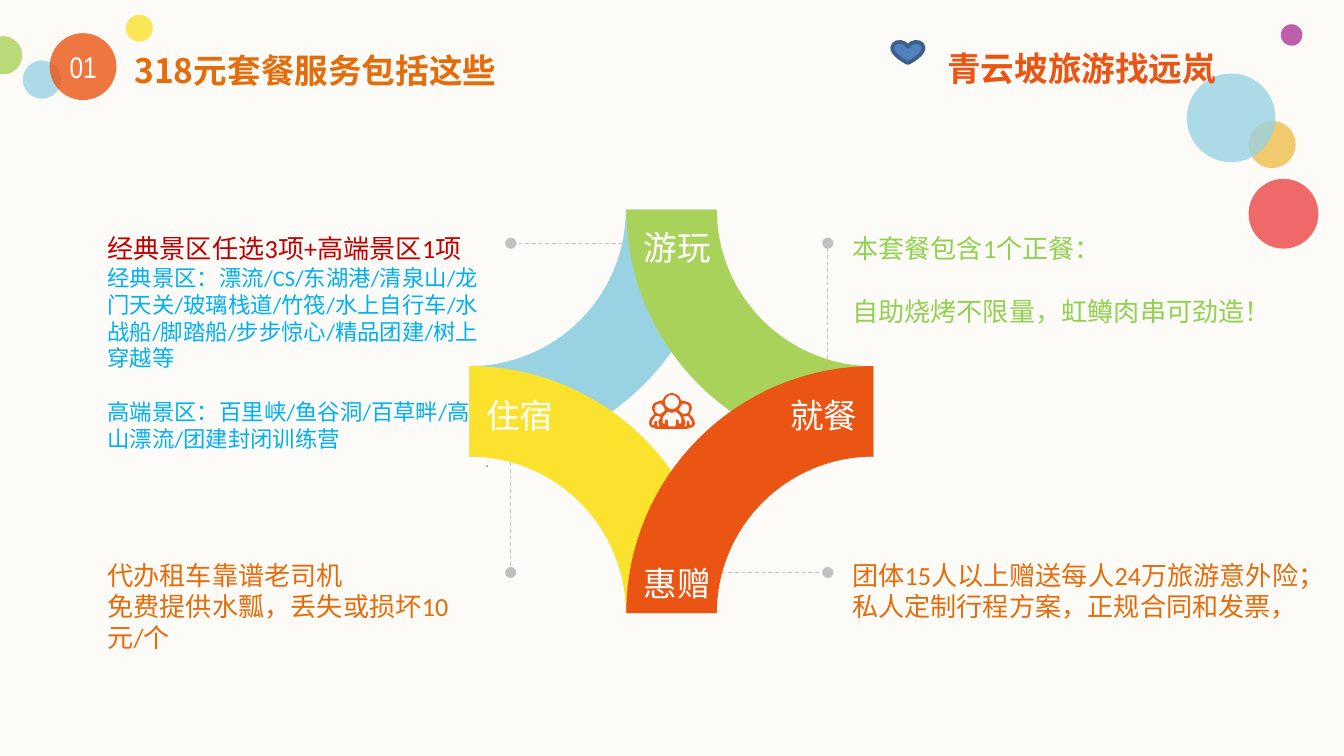
import math

import lxml.etree
import pptx
import pptx.dml.color
import pptx.enum.dml
import pptx.enum.shapes
import pptx.enum.text
import pptx.oxml.ns
import pptx.util

Pt = pptx.util.Pt
qn = pptx.oxml.ns.qn
SHAPES = pptx.enum.shapes.MSO_SHAPE
ALIGN = pptx.enum.text.PP_ALIGN
COLORS = {
    "background": "FCFBF7", "blue": "98D2E3", "yellow": "FBE22D",
    "green": "A9D25A", "orange": "EA5514", "purple": "B03896",
    "gold": "F0CA6C", "red": "EB4544", "line": "C0C0C0",
    "heart": "4F81BD", "heart_edge": "3A5F8C", "white": "FFFFFF",
    "lime": "92D050", "amber": "E46C0A", "crimson": "C00000",
    "sky": "00B0F0", "gray": "7F7F7F",
}
LEFT, TOP, RIGHT, BOTTOM = 251.4, 112.3, 467.9, 328.5
OUTER_RADIUS, INNER_RADIUS = 132.4, 83.9


def color(name):
    return pptx.dml.color.RGBColor.from_string(COLORS[name])


def paint(shape, fill, alpha=100):
    shape.shadow.inherit = False
    shape.fill.solid()
    shape.fill.fore_color.rgb = color(fill)
    shape.line.fill.background()
    if alpha < 100:
        tint = shape.fill._xPr.find(qn("a:solidFill"))[0]
        lxml.etree.SubElement(tint, qn("a:alpha"), val=str(alpha * 1000))


def add_preset(slide, kind, box, fill, alpha=100):
    shape = slide.shapes.add_shape(kind, *map(Pt, box))
    paint(shape, fill, alpha)
    return shape


def arc(center_x, center_y, radius, start, end, steps=32):
    angles = [math.radians(start + (end - start) * i / steps) for i in range(steps + 1)]
    return [(center_x + radius * math.cos(a), center_y + radius * math.sin(a)) for a in angles]


def add_outline(slide, contours, fill):
    contours = [[(Pt(x), Pt(y)) for x, y in contour] for contour in contours]
    builder = slide.shapes.build_freeform(*contours[0][0], scale=1.0)
    for index, contour in enumerate(contours):
        if index:
            builder.move_to(*contour[0])
        builder.add_line_segments(contour[1:], close=True)
    paint(builder.convert_to_shape(), fill)


def add_petal(slide, center_x, center_y, start, fill):
    outer = arc(center_x, center_y, OUTER_RADIUS, start, start + 90)
    inner = arc(center_x, center_y, INNER_RADIUS, start + 90, start)
    add_outline(slide, [outer + inner], fill)


def mirror(points):
    return [(-x, y) for x, y in reversed(points)]


def rounded(points):
    result = []
    for (x1, y1), (x2, y2) in zip(points, points[1:] + points[:1]):
        result += [(0.8 * x1 + 0.2 * x2, 0.8 * y1 + 0.2 * y2),
                   (0.2 * x1 + 0.8 * x2, 0.2 * y1 + 0.8 * y2)]
    return result


def add_people_icon(slide, center_x, top):
    silhouette = [(0, 0), (5, 2), (7, 6), (9, 6), (14, 8), (15, 12), (13, 16),
                  (16, 19), (17, 22), (17, 24), (15, 26), (13, 26), (12, 27), (0, 27)]
    body = [(0, 15), (3, 14), (6, 17), (7, 19), (7, 23), (5, 23), (5, 20),
            (3, 20), (3, 25), (0, 25)]
    side_head = [(7, 9), (9, 8), (12, 9), (13, 12), (12, 15), (9, 16), (7, 15), (5, 13)]
    side_body = [(11, 25), (11, 21), (13, 21), (13, 24), (15, 24), (15, 22),
                 (14, 20), (12, 17), (8, 18), (10, 21), (10, 23), (9, 25)]
    contours = [rounded(half + mirror(half)) for half in (silhouette, body)]
    contours.append(arc(0, 7, 5.2, 0, 360))
    for part in (side_head, side_body):
        contours += [rounded(part), rounded(mirror(part))]
    unit = 0.72
    add_outline(slide, [[(center_x + unit * x, top + unit * y) for x, y in contour]
                        for contour in contours], "orange")


def add_leader(slide, start, end):
    connector = slide.shapes.add_connector(
        pptx.enum.shapes.MSO_CONNECTOR.STRAIGHT, *map(Pt, start + end))
    connector.line.color.rgb = color("line")
    connector.line.width = Pt(0.5)
    connector.line.dash_style = pptx.enum.dml.MSO_LINE.DASH
    properties = connector._element.spPr
    lxml.etree.SubElement(properties.find(qn("a:ln")), qn("a:tailEnd"), type="oval")
    lxml.etree.SubElement(properties, qn("a:effectLst"))


def add_text(slide, box, paragraphs, font="Calibri", bold=False, align=ALIGN.LEFT, wrap=True):
    shape = slide.shapes.add_textbox(*map(Pt, box))
    frame = shape.text_frame
    frame.word_wrap = wrap
    frame.auto_size = pptx.enum.text.MSO_AUTO_SIZE.SHAPE_TO_FIT_TEXT
    if wrap:
        frame.margin_left = frame.margin_right = frame.margin_top = frame.margin_bottom = 0
    for index, (text, size, fill, gap) in enumerate(paragraphs):
        paragraph = frame.add_paragraph() if index else frame.paragraphs[0]
        paragraph.alignment = align
        paragraph.space_before = Pt(gap)
        run = paragraph.add_run()
        run.text = text
        run.font.size = Pt(size)
        run.font.name = font
        run.font.bold = bold
        run.font.color.rgb = color(fill)
    return frame


def add_petals(slide):
    add_petal(slide, LEFT, TOP, 0, "blue")
    add_petal(slide, LEFT, BOTTOM, 270, "yellow")
    add_petal(slide, RIGHT, TOP, 90, "green")
    add_petal(slide, RIGHT, BOTTOM, 180, "orange")
    add_people_icon(slide, 360, 210.4)
    for start, end in [((333.4, 130.3), (273.6, 130.3)), ((273.6, 247.7), (273.6, 306.7)),
                       ((386.6, 306.7), (443.5, 306.7)), ((443.5, 192.2), (443.5, 130.3))]:
        add_leader(slide, start, end)
    for text, left, top in [("游玩", 337.7, 118.1), ("就餐", 416.2, 208.1),
                            ("住宿", 253.4, 208.1), ("惠赠", 337.7, 298.1)]:
        add_text(slide, (left, top, 51.1, 28.8), [(text, 18, "white", 0)], wrap=False)


def add_descriptions(slide):
    add_text(slide, (456.5, 124.6, 241.9, 51.1), [
        ("本套餐包含1个正餐：", 14, "lime", 0),
        ("自助烧烤不限量，虹鳟肉串可劲造！", 14, "lime", 17)])
    add_text(slide, (456.5, 299.5, 250.6, 33.8), [
        ("团体15人以上赠送每人24万旅游意外险；", 14, "amber", 0),
        ("私人定制行程方案，正规合同和发票，", 14, "amber", 0)])
    add_text(slide, (57.6, 299.5, 216, 33.8), [
        ("代办租车靠谱老司机", 14, "amber", 0),
        ("免费提供水瓢，丢失或损坏10元/个", 14, "amber", 0)])
    frame = add_text(slide, (57.6, 124.6, 204.5, 128.2), [
        ("经典景区任选3项+高端景区1项", 14, "crimson", 0),
        ("经典景区：漂流/CS/东湖港/清泉山/龙门天关/玻璃栈道/竹筏/水上自行车/水战船/脚踏船/步步惊心/精品团建/树上穿越等",
         12, "sky", 0),
        ("高端景区：百里峡/鱼谷洞/百草畔/高山漂流/团建封闭训练营", 12, "sky", 14.5),
        (".", 8, "gray", 0)])
    frame.paragraphs[-1].alignment = ALIGN.RIGHT


def add_header(slide):
    for left, top, size, fill, alpha in [
            (67.5, 7.9, 14.4, "yellow", 80), (-8.6, 19.4, 20.5, "green", 80),
            (12.2, 32.4, 20.5, "blue", 80), (26.6, 17.8, 35.8, "orange", 80),
            (686.2, 13, 11.5, "purple", 80), (668.9, 64.8, 25.2, "gold", 100),
            (668.9, 95.8, 37.4, "red", 80), (635.8, 39.4, 47.5, "blue", 80)]:
        add_preset(slide, SHAPES.OVAL, (left, top, size, size), fill, alpha)
    heart = add_preset(slide, SHAPES.HEART, (478.1, 22.3, 16.6, 11.5), "heart")
    heart.line.color.rgb = color("heart_edge")
    heart.line.width = Pt(2)
    add_text(slide, (31.7, 25.9, 25.9, 19.4), [("01", 16, "white", 0)],
             font="Arial Narrow", align=ALIGN.CENTER)
    add_text(slide, (72, 26.6, 218.9, 21.6), [("318元套餐服务包括这些", 18, "amber", 0)],
             font="Noto Sans CJK JP", bold=True)
    add_text(slide, (500.4, 22.3, 164.2, 28.8), [("青云坡旅游找远岚", 18, "orange", 0)],
             bold=True, wrap=False)


def main():
    presentation = pptx.Presentation()
    presentation.slide_width = Pt(720)
    presentation.slide_height = Pt(405)
    slide = presentation.slides.add_slide(presentation.slide_layouts[6])
    slide.background.fill.solid()
    slide.background.fill.fore_color.rgb = color("background")
    add_petals(slide)
    add_descriptions(slide)
    add_header(slide)
    presentation.save("out.pptx")


if __name__ == "__main__":
    main()
